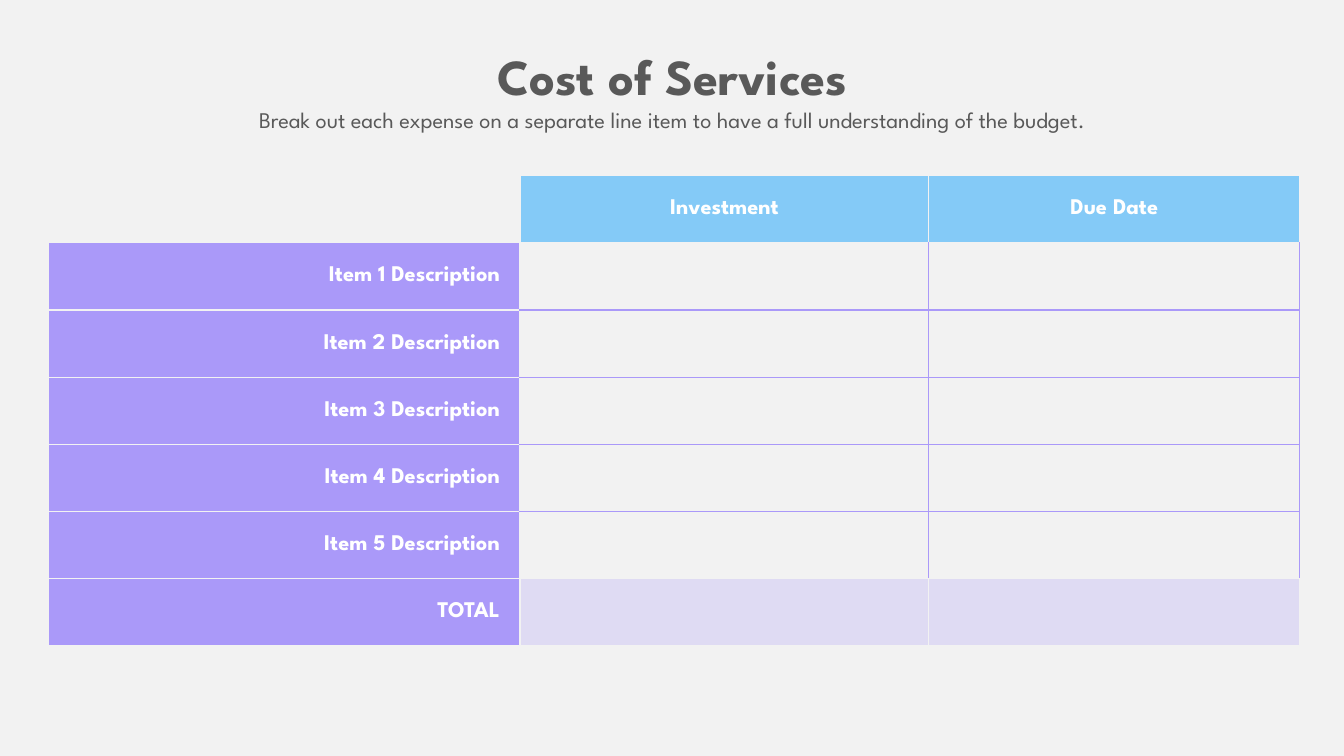
from lxml.etree import SubElement
from pptx import Presentation
from pptx.dml.color import RGBColor
from pptx.enum.text import MSO_ANCHOR, MSO_AUTO_SIZE, PP_ALIGN
from pptx.oxml.ns import qn
from pptx.util import Pt

FONT = "League Spartan"
COLORS = {
    "pale": "F2F2F2",
    "gray": "595959",
    "sky": "84CAF7",
    "violet": "AA99F9",
    "white": "FFFFFF",
}
TITLE = "Cost of Services"
LEAD = (
    "Break out each expense on a separate line item "
    "to have a full understanding of the budget."
)
HEADS = ["Investment", "Due Date"]
ITEMS = [f"Item {n} Description" for n in range(1, 6)] + ["TOTAL"]
WIDTHS = [337, 292, 265]
HEIGHT = 48
LAST = len(ITEMS)


def rgb(name):
    return RGBColor.from_string(COLORS[name])


def style(para, size, color, bold, align):
    para.alignment = align
    for run in para.runs:
        font = run.font
        font.name, font.size, font.bold = FONT, Pt(size), bold
        font.color.rgb = rgb(color)


def add_title(slide):
    box = slide.shapes.title
    box.left, box.top = Pt(101.5), Pt(28.8)
    box.width, box.height = Pt(757.5), Pt(72.7)
    frame = box.text_frame
    frame.word_wrap = True
    frame.auto_size = MSO_AUTO_SIZE.NONE
    frame.vertical_anchor = MSO_ANCHOR.TOP
    frame.text = TITLE
    style(frame.paragraphs[0], 36, "gray", True, PP_ALIGN.CENTER)
    lead = frame.add_paragraph()
    lead.text = LEAD
    style(lead, 16, "gray", False, PP_ALIGN.CENTER)


def set_alpha(fill, share):
    tone = fill.find(qn("a:srgbClr"))
    SubElement(tone, qn("a:alpha"), val=str(share * 1000))


def paint(cell, color, share=100):
    cell.fill.solid()
    cell.fill.fore_color.rgb = rgb(color)
    if share < 100:
        props = cell._tc.get_or_add_tcPr()
        set_alpha(props.find(qn("a:solidFill")), share)


def label(cell, text, align):
    cell.margin_left = cell.margin_right = Pt(14.4)
    cell.margin_top = cell.margin_bottom = Pt(14.4)
    cell.vertical_anchor = MSO_ANCHOR.MIDDLE
    cell.text_frame.text = text
    style(cell.text_frame.paragraphs[0], 16, "white", True, align)


def add_edges(cell, edges):
    props = cell._tc.get_or_add_tcPr()
    for place, (side, color) in enumerate(edges.items()):
        line = SubElement(props, qn(f"a:ln{side}"), w=str(Pt(1)))
        fill = SubElement(line, qn("a:solidFill"))
        SubElement(fill, qn("a:srgbClr"), val=COLORS[color])
        if color == "violet":
            set_alpha(fill, 25)
        props.insert(place, line)


def pick_edges(row, col):
    edges = dict.fromkeys("LRTB", "pale")
    if col > 0 and 0 < row < LAST:
        edges["R"] = "violet"
        if col > 1:
            edges["L"] = "violet"
        if row > 1:
            edges["T"] = "violet"
        if row < LAST - 1:
            edges["B"] = "violet"
    return edges


def fill_cell(cell, row, col):
    if row == 0 and col == 0:
        cell.fill.background()
    elif row == 0:
        paint(cell, "sky")
        label(cell, HEADS[col - 1], PP_ALIGN.CENTER)
    elif col == 0:
        paint(cell, "violet")
        label(cell, ITEMS[row - 1], PP_ALIGN.RIGHT)
    else:
        paint(cell, "violet" if row == LAST else "pale", 25)
    add_edges(cell, pick_edges(row, col))


def add_costs(slide):
    rows = LAST + 1
    frame = slide.shapes.add_table(
        rows, len(WIDTHS), Pt(34.5), Pt(125.5),
        Pt(sum(WIDTHS)), Pt(rows * HEIGHT),
    )
    table = frame.table
    table.first_row = table.horz_banding = False
    for col, width in enumerate(WIDTHS):
        table.columns[col].width = Pt(width)
    for row in range(rows):
        table.rows[row].height = Pt(HEIGHT)
        for col in range(len(WIDTHS)):
            fill_cell(table.cell(row, col), row, col)


def main():
    deck = Presentation()
    deck.slide_width, deck.slide_height = Pt(960), Pt(540)
    slide = deck.slides.add_slide(deck.slide_layouts[5])
    slide.background.fill.solid()
    slide.background.fill.fore_color.rgb = rgb("pale")
    add_title(slide)
    add_costs(slide)
    deck.save("out.pptx")


if __name__ == "__main__":
    main()
